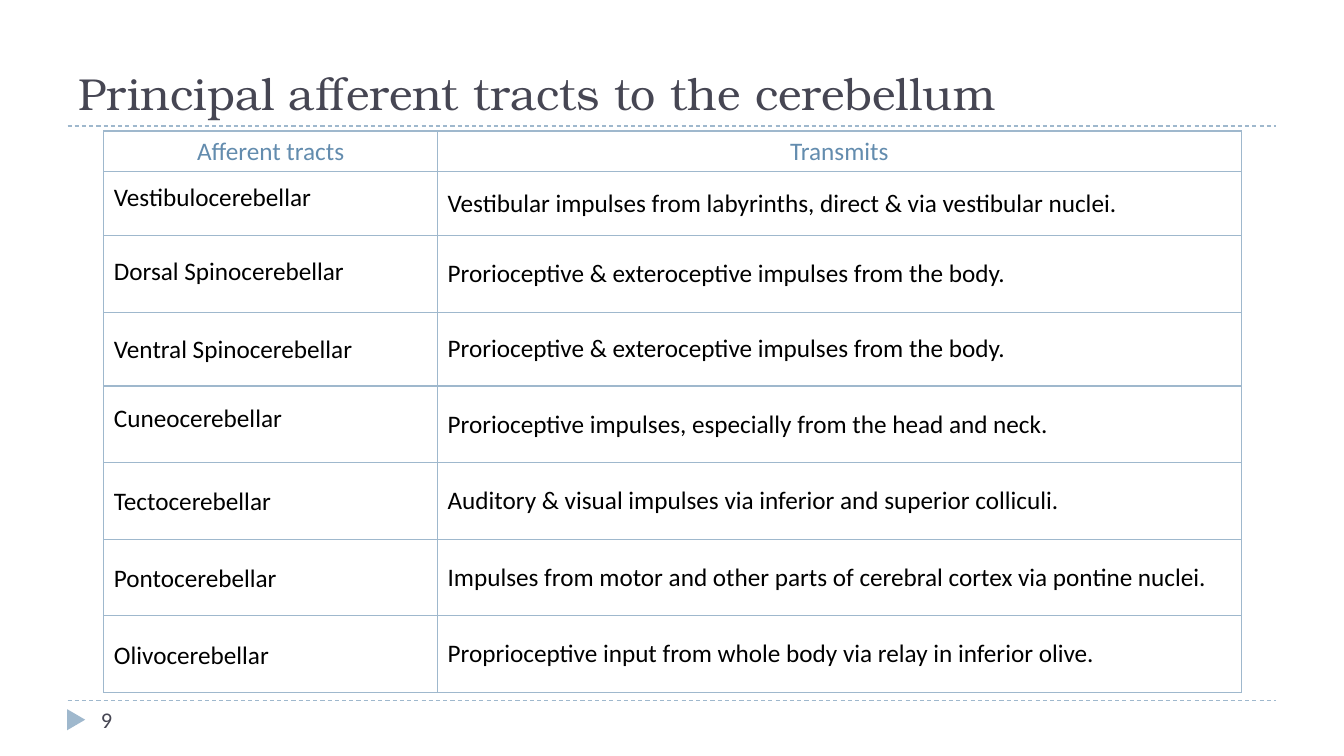
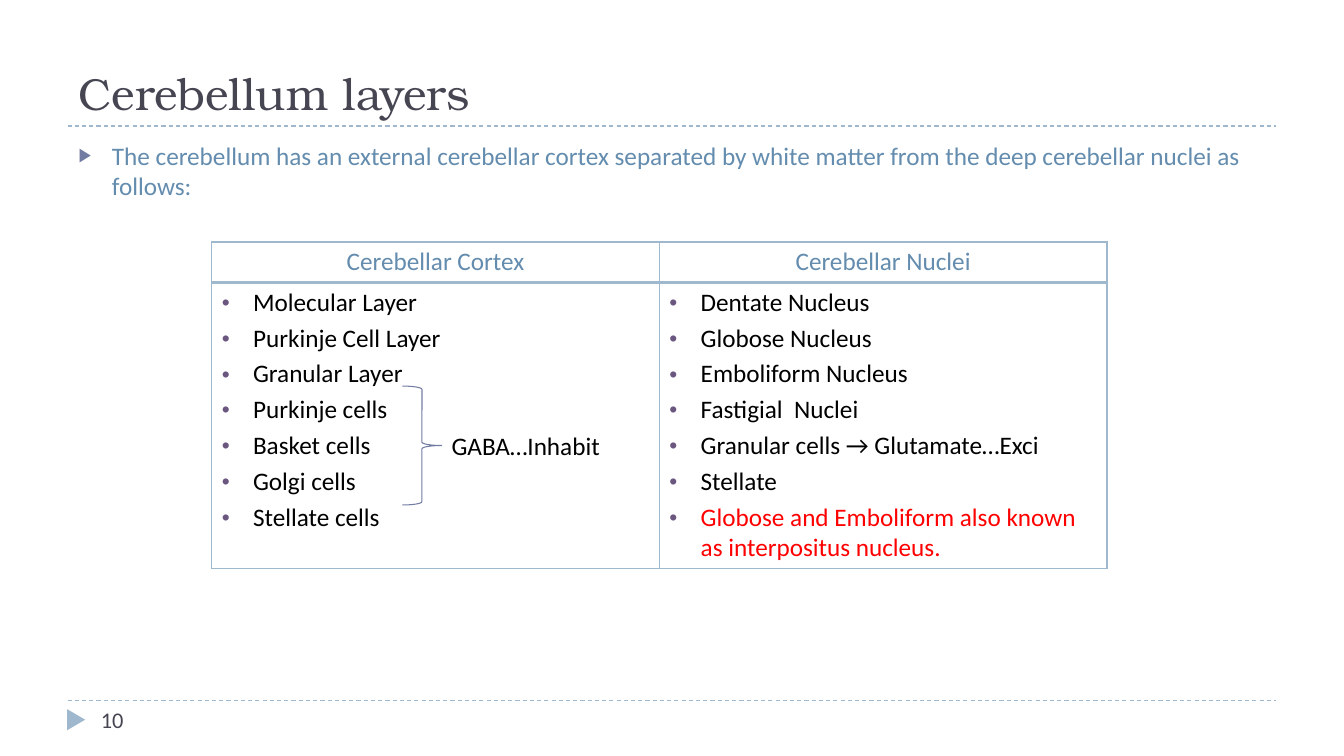
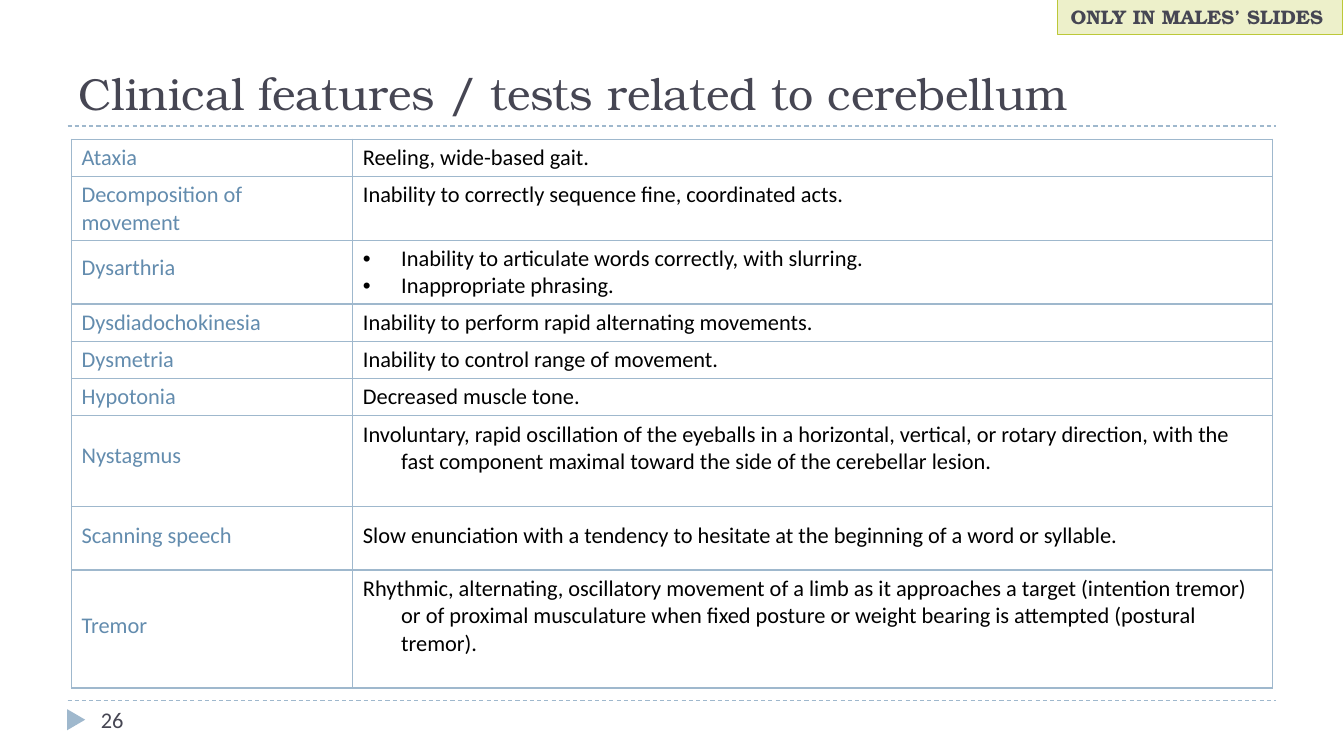
from lxml.etree import SubElement
from pptx import Presentation
from pptx.dml.color import RGBColor
from pptx.enum.dml import MSO_LINE
from pptx.enum.shapes import MSO_CONNECTOR, MSO_SHAPE
from pptx.enum.text import MSO_ANCHOR as Anchor, MSO_AUTO_SIZE as Fit, PP_ALIGN as Align
from pptx.oxml.ns import qn
from pptx.util import Inches, Pt

RULE, ACCENT, DARK, BLUE = "9FB8CD", "727CA3", "464653", "638CAE"
PLUM, RED, BLACK = "6B5680", "FF0000", "000000"
SERIF, SANS = "TeX Gyre Bonum", "Calibri"
PAD = {"margin_left": 0.11, "margin_right": 0.11, "margin_top": 0.06, "margin_bottom": 0.06}

# Row height, top inset of the first cell, tract, what it transmits
TRACT_HEAD = ("Afferent tracts", "Transmits")
TRACTS = [
    (0.64, 0.11, "Vestibulocerebellar",
     "Vestibular impulses from labyrinths, direct & via vestibular nuclei."),
    (0.76, 0.2, "Dorsal Spinocerebellar", "Prorioceptive & exteroceptive impulses from the body."),
    (0.73, 0.22, "Ventral Spinocerebellar", "Prorioceptive & exteroceptive impulses from the body."),
    (0.76, 0.17, "Cuneocerebellar", "Prorioceptive impulses, especially from the head and neck."),
    (0.76, 0.24, "Tectocerebellar",
     "Auditory & visual impulses via inferior and superior colliculi."),
    (0.76, 0.24, "Pontocerebellar",
     "Impulses from motor and other parts of cerebral cortex via pontine nuclei."),
    (0.76, 0.24, "Olivocerebellar",
     "Proprioceptive input from whole body via relay in inferior olive."),
]

INTRO = ("The cerebellum has an external cerebellar cortex separated by white matter "
         "from the deep cerebellar nuclei as follows:")
LAYERS = {
    "Cerebellar Cortex": ["Molecular Layer", "Purkinje Cell Layer", "Granular Layer",
                          "Purkinje cells", "Basket cells", "Golgi cells", "Stellate cells"],
    "Cerebellar Nuclei": ["Dentate Nucleus", "Globose Nucleus", "Emboliform Nucleus",
                          "Fastigial  Nuclei", "Granular cells → Glutamate…Exci", "Stellate",
                          "Globose and Emboliform also known as interpositus nucleus."],
}

# Row height, top insets of both cells, sign, meaning
SIGNS = [
    (0.37, (0.05, 0.05), ["Ataxia"], ["Reeling, wide-based gait."]),
    (0.63, (0.05, 0.05), ["Decomposition of", "movement"],
     ["Inability to correctly sequence fine, coordinated acts."]),
    (0.63, (0.14, 0.05), ["Dysarthria"],
     ["Inability to articulate words correctly, with slurring.", "Inappropriate phrasing."]),
    (0.37, (0.05, 0.05), ["Dysdiadochokinesia"],
     ["Inability to perform rapid alternating movements."]),
    (0.37, (0.05, 0.05), ["Dysmetria"], ["Inability to control range of movement."]),
    (0.37, (0.05, 0.05), ["Hypotonia"], ["Decreased muscle tone."]),
    (0.9, (0.26, 0.05), ["Nystagmus"],
     ["Involuntary, rapid oscillation of the eyeballs in a horizontal, vertical, or rotary "
      "direction, with the fast component maximal toward the side of the cerebellar lesion."]),
    (0.63, (0.15, 0.15), ["Scanning speech"],
     ["Slow enunciation with a tendency to hesitate at the beginning of a word or syllable."]),
    (1.17, (0.42, 0.05), ["Tremor"],
     ["Rhythmic, alternating, oscillatory movement of a limb as it approaches a target "
      "(intention tremor) or of proximal musculature when fixed posture or weight bearing "
      "is attempted (postural tremor)."]),
]


def rgb(code):
    return RGBColor.from_string(code)


def box(*sides):
    return [Inches(side) for side in sides]


def inset(part, sides):
    for name, size in sides.items():
        setattr(part, name, Inches(size))


def mark(para, indent, sign=None, color=None, scale=100):
    """Give a paragraph a hanging indent and, if a sign is named, a bullet."""
    props = para._p.get_or_add_pPr()
    props.set("marL", str(Inches(indent)))
    props.set("indent", str(-Inches(indent)))
    if color:
        SubElement(SubElement(props, qn("a:buClr")), qn("a:srgbClr"), val=color)
    if sign:
        SubElement(props, qn("a:buSzPct"), val=str(scale * 1000))
        SubElement(props, qn("a:buFont"), typeface="Arial")
        SubElement(props, qn("a:buChar"), char=sign)


def write(frame, lines, size, color, font=SANS, bold=False, align=Align.LEFT, gap=0, bullet=None):
    look = {"size": Pt(size), "name": font, "bold": bold}
    for i, line in enumerate(lines):
        para = frame.add_paragraph() if i else frame.paragraphs[0]
        if bullet:
            mark(para, **bullet)
        para.alignment = align
        para.space_before = Pt(gap if i else 0)
        run = para.add_run()
        run.text = line
        for name, value in look.items():
            setattr(run.font, name, value)
        run.font.color.rgb = rgb(color)


def grid(slide, left, top, cols, rows, under=1):
    """Add an unfilled ruled table; under is the line width below its first row."""
    table = slide.shapes.add_table(len(rows), len(cols),
                                   *box(left, top, sum(cols), sum(rows))).table
    table.first_row = table.horz_banding = False
    for col, width in zip(table.columns, cols):
        col.width = Inches(width)
    for r, (row, height) in enumerate(zip(table.rows, rows)):
        row.height = Inches(height)
        for cell in row.cells:
            props = cell._tc.get_or_add_tcPr()
            for side in ("lnL", "lnR", "lnT", "lnB"):
                wide = under if (r, side) in ((0, "lnB"), (1, "lnT")) else 1
                edge = SubElement(props, qn("a:" + side), w=str(Pt(wide)))
                SubElement(SubElement(edge, qn("a:solidFill")), qn("a:srgbClr"), val=RULE)
            cell.fill.background()
            inset(cell, {"margin_left": 0.1, "margin_right": 0.1,
                         "margin_top": 0.05, "margin_bottom": 0.05})
    return table


def shape(slide, kind, place, fill=None, line=None):
    item = slide.shapes.add_shape(kind, *box(*place))
    item.shadow.inherit = False
    if fill:
        item.fill.solid()
        item.fill.fore_color.rgb = rgb(fill)
    else:
        item.fill.background()
    if line:
        item.line.color.rgb = rgb(line)
        item.line.width = Pt(0.75)
    else:
        item.line.fill.background()
    return item


def label(slide, place, lines, wrap=True, sides=None, **look):
    frame = slide.shapes.add_textbox(*box(*place)).text_frame
    frame.word_wrap = wrap
    inset(frame, sides or {})
    write(frame, lines, **look)


def settle(holder, place, anchor):
    """Place a placeholder and return its text frame."""
    holder.left, holder.top, holder.width, holder.height = box(*place)
    frame = holder.text_frame
    frame.auto_size, frame.vertical_anchor, frame.word_wrap = Fit.NONE, anchor, True
    inset(frame, PAD)
    return frame


def start(prs, layout, title, number):
    """Add a slide with the shared title, rules and page mark."""
    slide = prs.slides.add_slide(prs.slide_layouts[layout])
    for y in (6.95, 1.25):
        rule = slide.shapes.add_connector(MSO_CONNECTOR.STRAIGHT, *box(0.67, y, 12.66, y))
        rule.line.color.rgb = rgb(RULE)
        rule.line.width = Pt(0.75)
        rule.line.dash_style = MSO_LINE.DASH
        SubElement(rule.element.spPr, qn("a:effectLst"))
    shape(slide, MSO_SHAPE.ISOSCELES_TRIANGLE, (0.65, 7.05, 0.21, 0.18), RULE).rotation = 90
    frame = settle(slide.shapes.title, (0.67, 0.17, 12, 1.08), Anchor.BOTTOM)
    write(frame, [title], 32, DARK, SERIF)
    label(slide, (0.89, 6.95, 2.89, 0.4), [str(number)], sides=PAD, size=16, color=DARK)
    return slide


def tracts(prs):
    slide = start(prs, 5, "Principal afferent tracts to the cerebellum", 9)
    table = grid(slide, 1.03, 1.3, (3.31, 7.97), [0.4] + [row[0] for row in TRACTS])
    for c, text in enumerate(TRACT_HEAD):
        write(table.cell(0, c).text_frame, [text], 18, BLUE, align=Align.CENTER)
    for r, (_, top, name, role) in enumerate(TRACTS, 1):
        first, second = table.rows[r].cells
        first.margin_top = Inches(top)
        second.vertical_anchor = Anchor.MIDDLE
        write(first.text_frame, [name], 18, BLACK)
        write(second.text_frame, [role], 18, BLACK)


def layers(prs):
    slide = start(prs, 1, "Cerebellum layers", 10)
    body = settle(slide.placeholders[1], (0.67, 1.33, 12, 5.4), Anchor.TOP)
    write(body, [INTRO], 18, BLUE,
          bullet={"indent": 0.33, "sign": "▶", "color": ACCENT, "scale": 76})
    table = grid(slide, 2.1, 2.4, (4.44, 4.44), (0.4, 2.84), under=2)
    dot = {"indent": 0.31, "sign": "•", "color": PLUM, "scale": 90}
    for c, (name, parts) in enumerate(LAYERS.items()):
        write(table.cell(0, c).text_frame, [name], 18, BLUE, align=Align.CENTER)
        write(table.cell(1, c).text_frame, parts, 18, BLACK, gap=3.6, bullet=dot)
    note = table.cell(1, 1).text_frame.paragraphs[-1]
    note.runs[0].font.color.rgb = rgb(RED)
    shape(slide, MSO_SHAPE.RIGHT_BRACE, (3.99, 3.83, 0.39, 1.18), line=ACCENT)
    label(slide, (4.38, 4.22, 1.81, 0.4), ["GABA…Inhabit"], wrap=False, size=18, color=BLACK)


def signs(prs):
    slide = start(prs, 5, "Clinical features / tests related to cerebellum", 26)
    table = grid(slide, 0.71, 1.38, (2.79, 9.12), [row[0] for row in SIGNS])
    for r, (_, tops, *texts) in enumerate(SIGNS):
        for c, (top, lines, color) in enumerate(zip(tops, texts, (BLUE, BLACK))):
            cell = table.cell(r, c)
            cell.margin_top = Inches(top)
            sign = "•" if c and len(lines) > 1 else None
            write(cell.text_frame, lines, 16, color, bullet={"indent": 0.38, "sign": sign})
    badge = shape(slide, MSO_SHAPE.RECTANGLE, (10.49, 0, 2.83, 0.34), "EDF0CA", "BCC838")
    badge.text_frame.vertical_anchor = Anchor.TOP
    badge.text_frame.word_wrap = True
    write(badge.text_frame, ["ONLY IN MALES’ SLIDES "], 14, DARK, SERIF, True, Align.CENTER)


def main():
    prs = Presentation()
    prs.slide_width, prs.slide_height = box(13.33, 7.5)
    for build in (tracts, layers, signs):
        build(prs)
    prs.save("out.pptx")


if __name__ == "__main__":
    main()
